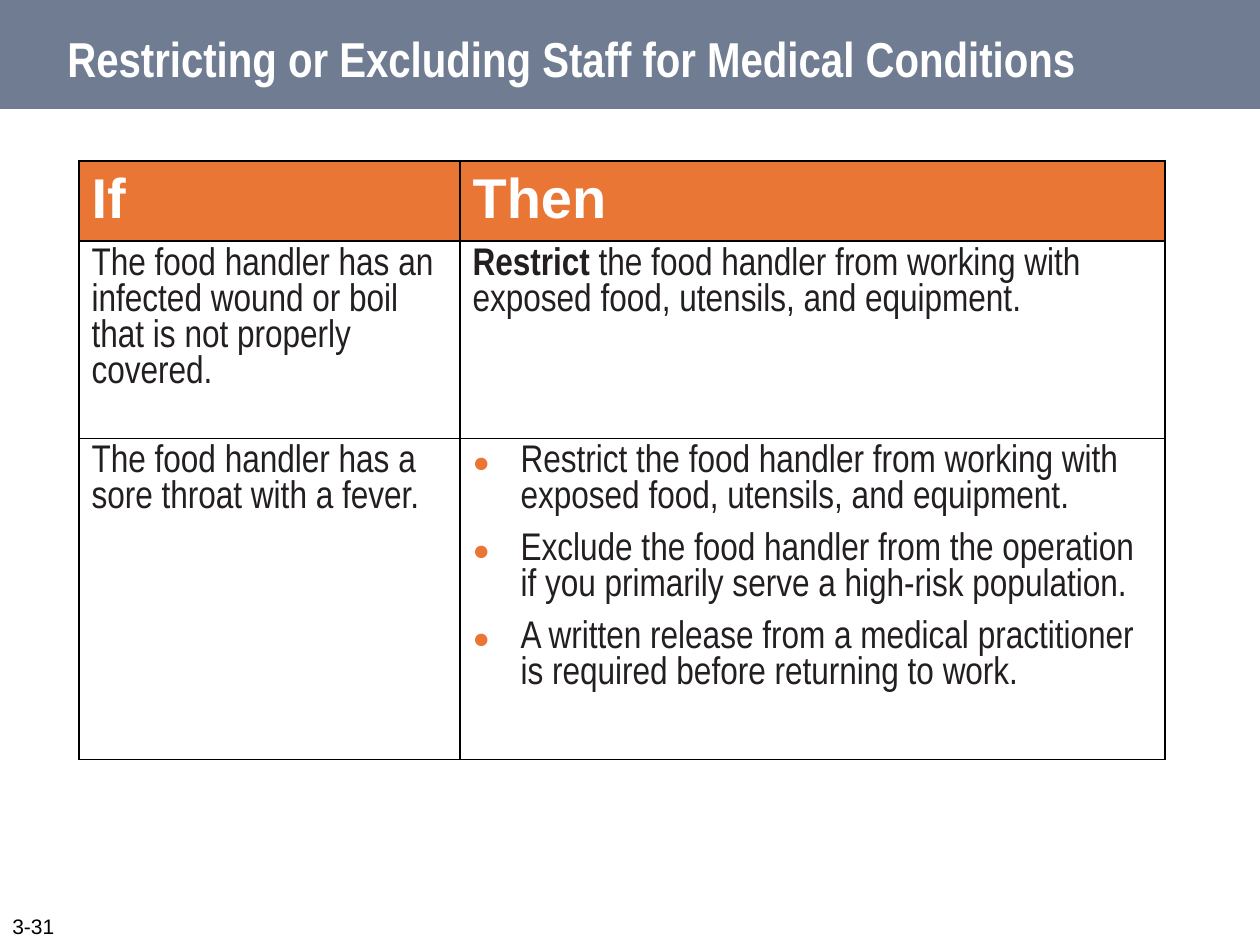
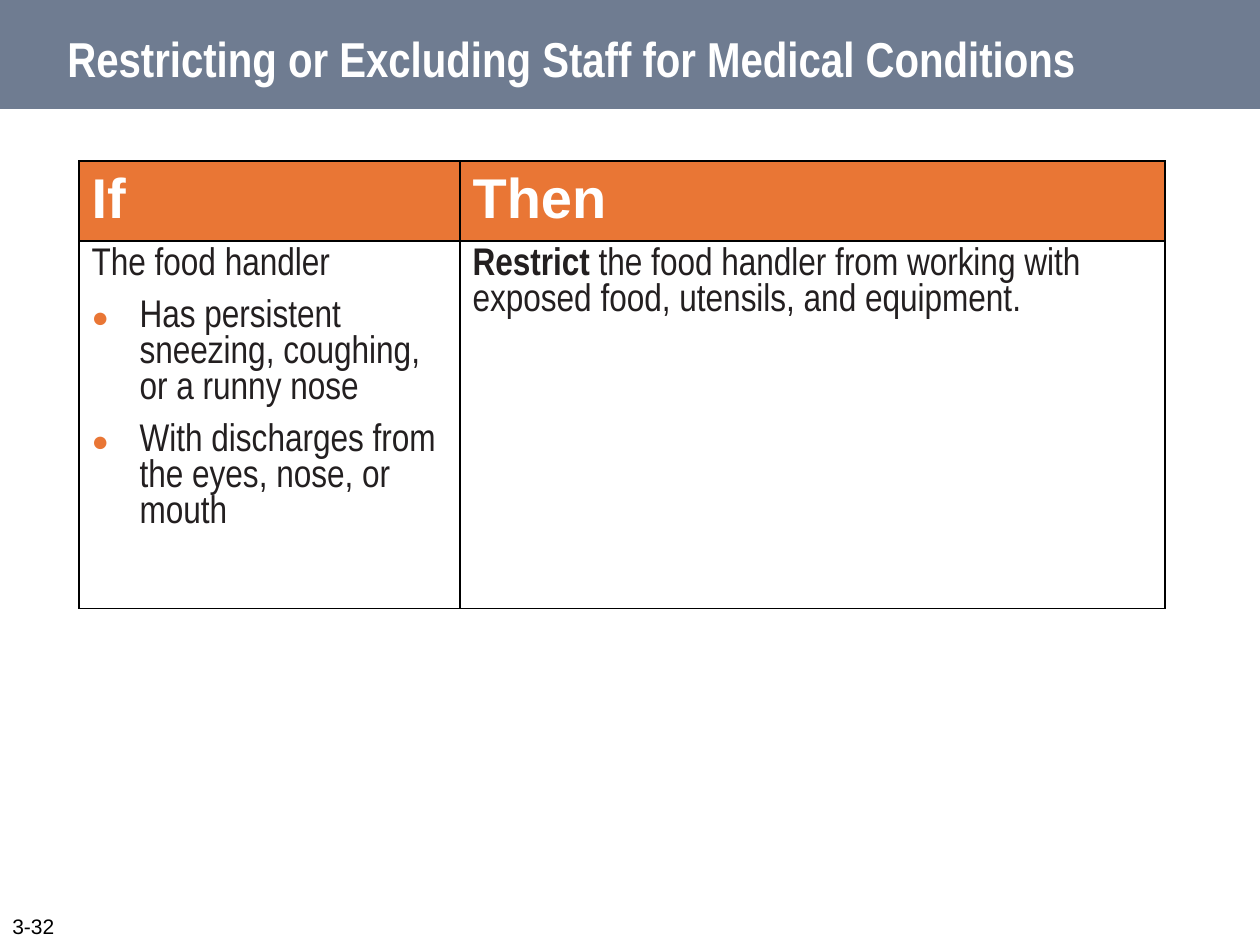
import pptx
import pptx.dml.color
import pptx.enum.shapes
import pptx.enum.text
import pptx.oxml
import pptx.oxml.ns
import pptx.util
from lxml import etree

# Content: plain strings are paragraphs, ("•", text) is a bullet,
# ("bold", lead, rest) is a paragraph with a bold lead word
TITLE = "Restricting or Excluding Staff for Medical Conditions"
HEADINGS = ("If", "Then")
RESTRICT = ("bold", "Restrict",
            " the food handler from working with exposed food, utensils, and equipment.")
SLIDES = [
    {"number": "3-31", "rows": [
        (197, ["The food handler has an infected wound or boil that is not properly covered."],
         [RESTRICT]),
        (321, ["The food handler has a sore throat with a fever."],
         [("•", "Restrict the food handler from working with exposed food, utensils, and equipment."),
          ("•", "Exclude the food handler from the operation if you primarily serve a high-risk population."),
          ("•", "A written release from a medical practitioner is required before returning to work.")]),
    ]},
    {"number": "3-32", "rows": [
        (367, ["The food handler",
               ("•", "Has persistent sneezing, coughing, or a runny nose"),
               ("•", "With discharges from the eyes, nose, or mouth")],
         [RESTRICT]),
    ]},
]

# Shared look
RGBColor = pptx.dml.color.RGBColor
SLATE = RGBColor(0x6F, 0x7C, 0x91)
ORANGE = RGBColor(0xE9, 0x76, 0x35)
INK = RGBColor(0x23, 0x1F, 0x20)
WHITE = RGBColor(0xFF, 0xFF, 0xFF)
BLACK = RGBColor(0, 0, 0)
HEADING_FONT, BODY_FONT = "Arial", "Arial Narrow"
SLIDE_WIDTH, SLIDE_HEIGHT, BAND_HEIGHT = 1260, 945, 109
TABLE_LEFT, TABLE_TOP, HEADER_HEIGHT = 79, 161, 80
COLUMN_WIDTHS = (381, 705)
BULLET_INDENT = 48


def px(length):
    return pptx.util.Emu(round(length * 914400 / 126))


def style(paragraph, name, size, color, bold=None):
    font = paragraph.font
    font.name, font.size, font.bold = name, pptx.util.Pt(size), bold
    font.color.rgb = color


def add_label(slide, box, text, *font):
    shape = slide.shapes.add_textbox(*map(px, box))
    frame = shape.text_frame
    frame.word_wrap = True
    frame.vertical_anchor = pptx.enum.text.MSO_ANCHOR.BOTTOM
    frame.text = text
    style(frame.paragraphs[0], *font)


def add_bullet(paragraph):
    properties = paragraph._p.get_or_add_pPr()
    properties.set("marL", str(px(BULLET_INDENT)))
    properties.set("indent", str(-px(BULLET_INDENT)))
    namespace = pptx.oxml.ns.nsdecls("a")
    for xml in (f'<a:buClr {namespace}><a:srgbClr val="{ORANGE}"/></a:buClr>',
                f'<a:buSzPct {namespace} val="75000"/>',
                f'<a:buFont {namespace} typeface="Arial"/>',
                f'<a:buChar {namespace} char="●"/>'):
        properties.append(pptx.oxml.parse_xml(xml))


def add_borders(cell):
    properties = cell._tc.get_or_add_tcPr()
    for side in ("lnL", "lnR", "lnT", "lnB"):
        line = etree.SubElement(properties, pptx.oxml.ns.qn(f"a:{side}"),
                                w=str(pptx.util.Pt(1)))
        fill = etree.SubElement(line, pptx.oxml.ns.qn("a:solidFill"))
        etree.SubElement(fill, pptx.oxml.ns.qn("a:srgbClr"), val=str(BLACK))


def fill_header(cell, text):
    add_borders(cell)
    cell.fill.solid()
    cell.fill.fore_color.rgb = ORANGE
    cell.text = text
    style(cell.text_frame.paragraphs[0], HEADING_FONT, 32, WHITE, True)


def fill_body(cell, items):
    add_borders(cell)
    cell.fill.background()
    frame = cell.text_frame
    for index, item in enumerate(items):
        paragraph = frame.paragraphs[0] if index == 0 else frame.add_paragraph()
        kind, *texts = ("plain", item) if isinstance(item, str) else item
        if index:
            paragraph.space_before = pptx.util.Pt(9)
        if kind == "•":
            add_bullet(paragraph)
        style(paragraph, BODY_FONT, 22, INK, False)
        for text in texts:
            paragraph.add_run().text = text
        if kind == "bold":
            paragraph.runs[0].font.bold = True


def add_condition_table(slide, rows):
    heights = [HEADER_HEIGHT] + [height for height, *_ in rows]
    box = (TABLE_LEFT, TABLE_TOP, sum(COLUMN_WIDTHS), sum(heights))
    table = slide.shapes.add_table(len(heights), len(HEADINGS), *map(px, box)).table
    table.first_row = table.horz_banding = False
    for column, width in zip(table.columns, COLUMN_WIDTHS):
        column.width = px(width)
    for row, height in zip(table.rows, heights):
        row.height = px(height)
    for column, heading in enumerate(HEADINGS):
        fill_header(table.cell(0, column), heading)
        for row, (_, *cells) in enumerate(rows, start=1):
            fill_body(table.cell(row, column), cells[column])


def add_frame(slide, number):
    # Title band, title and slide number
    band = slide.shapes.add_shape(pptx.enum.shapes.MSO_SHAPE.RECTANGLE,
                                  0, 0, px(SLIDE_WIDTH), px(BAND_HEIGHT))
    band.shadow.inherit = False
    band.fill.solid()
    band.fill.fore_color.rgb = SLATE
    band.line.fill.background()
    add_label(slide, (55, 22, 1145, 72), TITLE, BODY_FONT, 28, WHITE, True)
    add_label(slide, (0, 907, 78, 38), number, HEADING_FONT, 12, BLACK)


def main():
    presentation = pptx.Presentation()
    presentation.slide_width = px(SLIDE_WIDTH)
    presentation.slide_height = px(SLIDE_HEIGHT)
    for content in SLIDES:
        slide = presentation.slides.add_slide(presentation.slide_layouts[6])
        add_frame(slide, content["number"])
        add_condition_table(slide, content["rows"])
    presentation.save("out.pptx")


if __name__ == "__main__":
    main()
